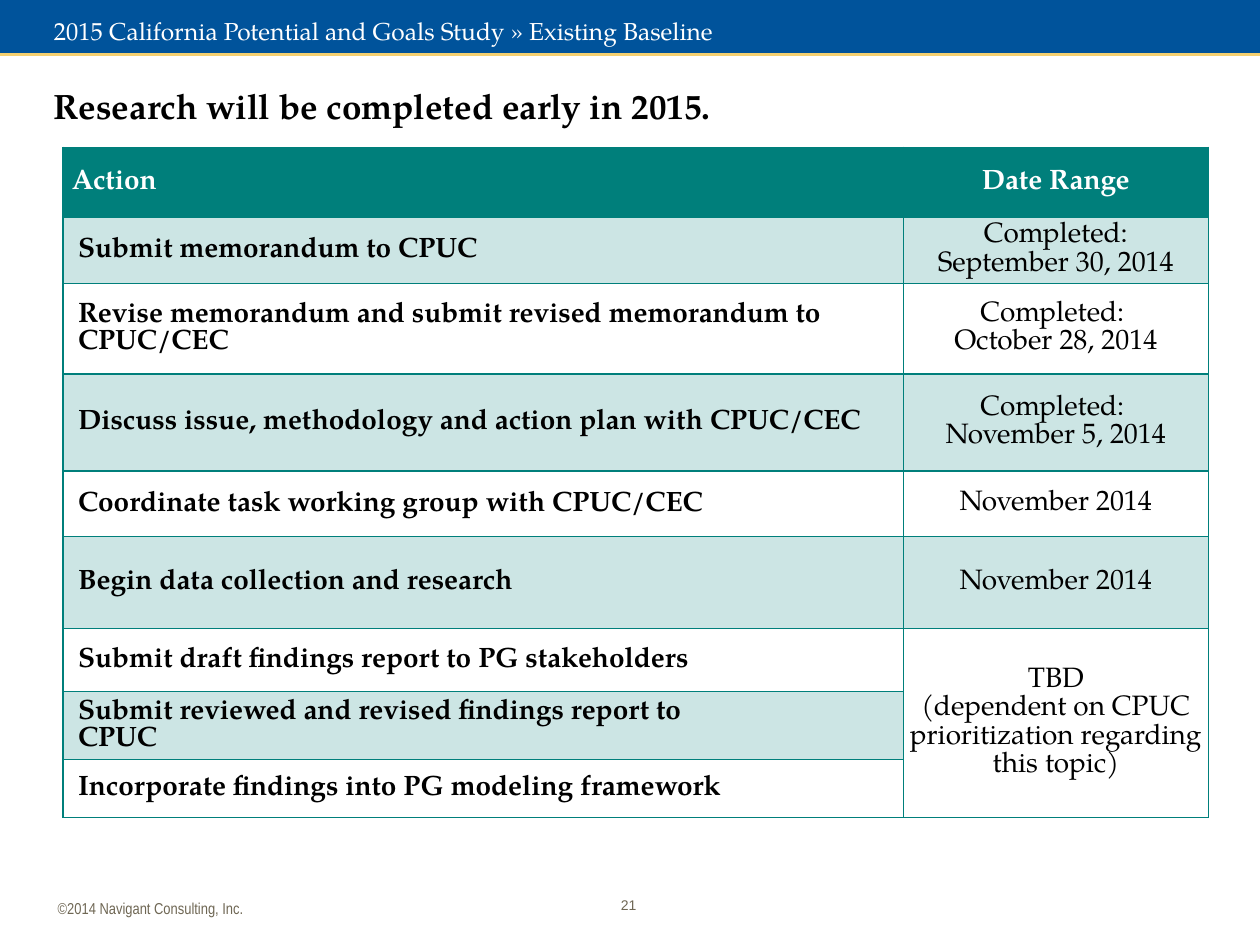
from dataclasses import dataclass

import pptx
import pptx.dml.color
import pptx.enum.shapes
import pptx.enum.text
import pptx.oxml
import pptx.oxml.ns
import pptx.util
from pptx.util import Inches

ALIGN = pptx.enum.text.PP_ALIGN
ANCHOR = pptx.enum.text.MSO_ANCHOR
SERIF = "TeX Gyre Pagella"
BLUE, GOLD, TEAL = "00539B", "F5D070", "007F7B"
WHITE, BLACK, BROWN = "FFFFFF", "000000", "6F6754"


@dataclass
class Style:
    size: float
    color: str
    font: str = SERIF
    bold: bool = False
    align: ALIGN = ALIGN.LEFT


@dataclass
class Label:
    text: str
    left: float
    top: float
    width: float
    height: float
    style: Style
    anchor: ANCHOR = ANCHOR.TOP
    inset: float = 0.05


@dataclass
class Action:
    lines: list[str]
    dates: list[str]
    height: float


HEADER = Style(16, WHITE, bold=True)
HEADER_DATE = Style(16, WHITE, bold=True, align=ALIGN.CENTER)
ACTION = Style(16, BLACK, bold=True)
DATE = Style(16, BLACK, align=ALIGN.CENTER)

LABELS = [
    Label("21", 4.74, 7.05, 0.5, 0.33,
          Style(8, BROWN, "Arial", align=ALIGN.CENTER), inset=0.1),
    Label("©2014 Navigant Consulting, Inc.", 0.36, 7.08, 3.81, 0.25,
          Style(9, BROWN, "Arial Narrow")),
    Label("Research will be completed early in 2015.", 0.33, 0.5, 9.3, 0.67,
          Style(20, BLACK, bold=True), ANCHOR.MIDDLE),
    Label("2015 California Potential and Goals Study » Existing Baseline",
          0.33, 0.08, 9.3, 0.25, Style(14, WHITE)),
]

HEADER_HEIGHT = 0.55
COLUMN_WIDTHS = [6.67, 2.42]
MERGED_ROWS = (6, 8)
ACTIONS = [
    Action(["Submit memorandum to CPUC"],
           ["Completed:", "September 30, 2014"], 0.53),
    Action(["Revise memorandum and submit revised memorandum to CPUC/CEC"],
           ["Completed: ", "October 28, 2014"], 0.72),
    Action(["Discuss issue, methodology and action plan with CPUC/CEC"],
           ["Completed: ", "November 5, 2014"], 0.77),
    Action(["Coordinate task working group with CPUC/CEC"],
           ["November 2014"], 0.52),
    Action(["Begin data collection and research"], ["November 2014"], 0.73),
    Action(["Submit draft findings report to PG stakeholders"],
           ["TBD", "(dependent on CPUC prioritization regarding this topic)"], 0.5),
    Action(["Submit reviewed and revised findings report to", "CPUC"], [], 0.54),
    Action(["Incorporate findings into PG modeling framework"], [], 0.46),
]


def rgb(color: str) -> pptx.dml.color.RGBColor:
    return pptx.dml.color.RGBColor.from_string(color)


def write(paragraph, text: str, style: Style) -> None:
    paragraph.alignment = style.align
    run = paragraph.add_run()
    run.text = text
    run.font.name = style.font
    run.font.size = pptx.util.Pt(style.size)
    run.font.bold = style.bold
    run.font.color.rgb = rgb(style.color)


def write_lines(frame, lines: list[str], style: Style) -> None:
    for index, line in enumerate(lines):
        paragraph = frame.add_paragraph() if index else frame.paragraphs[0]
        write(paragraph, line, style)


def add_label(slide, label: Label) -> None:
    shape = slide.shapes.add_textbox(Inches(label.left), Inches(label.top),
                                     Inches(label.width), Inches(label.height))
    frame = shape.text_frame
    frame.word_wrap = True
    frame.vertical_anchor = label.anchor
    frame.margin_top = frame.margin_bottom = Inches(label.inset)
    write(frame.paragraphs[0], label.text, label.style)


def add_banner(slide, width: int) -> None:
    height = Inches(0.42)
    rule = slide.shapes.add_connector(
        pptx.enum.shapes.MSO_CONNECTOR.STRAIGHT, width, height, 0, height)
    rule.line.color.rgb = rgb(GOLD)
    rule.line.width = pptx.util.Pt(3)
    properties = rule._element.spPr
    properties.append(pptx.oxml.parse_xml(
        f'<a:effectLst {pptx.oxml.ns.nsdecls("a")}/>'))
    banner = slide.shapes.add_shape(
        pptx.enum.shapes.MSO_SHAPE.RECTANGLE, 0, 0, width, height)
    banner.shadow.inherit = False
    banner.fill.solid()
    banner.fill.fore_color.rgb = rgb(BLUE)
    banner.line.fill.background()


def set_borders(cell, bottom: float = 1) -> None:
    """Put teal lines on all sides; must run before the cell fill is set."""
    properties = cell._tc.get_or_add_tcPr()
    for side, points in (("L", 1), ("R", 1), ("T", 1), ("B", bottom)):
        properties.append(pptx.oxml.parse_xml(
            f'<a:ln{side} {pptx.oxml.ns.nsdecls("a")} w="{pptx.util.Pt(points)}">'
            f'<a:solidFill><a:srgbClr val="{TEAL}"/></a:solidFill></a:ln{side}>'))


def set_fill(cell, opacity: int) -> None:
    """Fill with teal at a percentage of opacity, or not at all for zero."""
    if not opacity:
        cell.fill.background()
        return
    cell.fill.solid()
    cell.fill.fore_color.rgb = rgb(TEAL)
    if opacity < 100:
        color = cell._tc.tcPr.find(".//" + pptx.oxml.ns.qn("a:solidFill"))
        fill = cell._tc.tcPr.find(pptx.oxml.ns.qn("a:solidFill"))
        color = fill[0]
        color.append(pptx.oxml.parse_xml(
            f'<a:alpha {pptx.oxml.ns.nsdecls("a")} val="{opacity * 1000}"/>'))


def format_cell(cell, side_margin: float, opacity: int, bottom: float = 1) -> None:
    cell.vertical_anchor = ANCHOR.MIDDLE
    cell.margin_left = cell.margin_right = Inches(side_margin)
    cell.margin_top, cell.margin_bottom = Inches(0.01), 0
    set_borders(cell, bottom)
    set_fill(cell, opacity)


def add_schedule(slide) -> None:
    heights = [HEADER_HEIGHT] + [action.height for action in ACTIONS]
    table = slide.shapes.add_table(
        len(heights), len(COLUMN_WIDTHS), Inches(0.5), Inches(1.17),
        Inches(sum(COLUMN_WIDTHS)), Inches(sum(heights))).table
    table.first_row = table.horz_banding = False
    for column, width in zip(table.columns, COLUMN_WIDTHS):
        column.width = Inches(width)
    for row, height in zip(table.rows, heights):
        row.height = Inches(height)

    headings = [("Action", HEADER), ("Date Range", HEADER_DATE)]
    for column, (text, style) in enumerate(headings):
        cell = table.cell(0, column)
        format_cell(cell, 0.07, 100, bottom=2)
        write(cell.text_frame.paragraphs[0], text, style)
        cell.text_frame.paragraphs[0].space_after = pptx.util.Pt(2)

    first_merged, last_merged = MERGED_ROWS
    for row, action in enumerate(ACTIONS, start=1):
        shade = 20 if row % 2 else 0
        action_cell, date_cell = table.cell(row, 0), table.cell(row, 1)
        format_cell(action_cell, 0.01, shade)
        format_cell(date_cell, 0.01, 0 if row >= first_merged else shade)
        write_lines(action_cell.text_frame, action.lines, ACTION)
        for paragraph in action_cell.text_frame.paragraphs:
            paragraph._p.get_or_add_pPr().set("marL", str(Inches(0.11)))
        write_lines(date_cell.text_frame, action.dates, DATE)
    table.cell(first_merged, 1).merge(table.cell(last_merged, 1))


def main() -> None:
    presentation = pptx.Presentation()
    presentation.slide_width, presentation.slide_height = Inches(10), Inches(7.5)
    slide = presentation.slides.add_slide(presentation.slide_layouts[6])
    add_banner(slide, presentation.slide_width)
    add_schedule(slide)
    for label in LABELS:
        add_label(slide, label)
    presentation.save("out.pptx")


if __name__ == "__main__":
    main()
